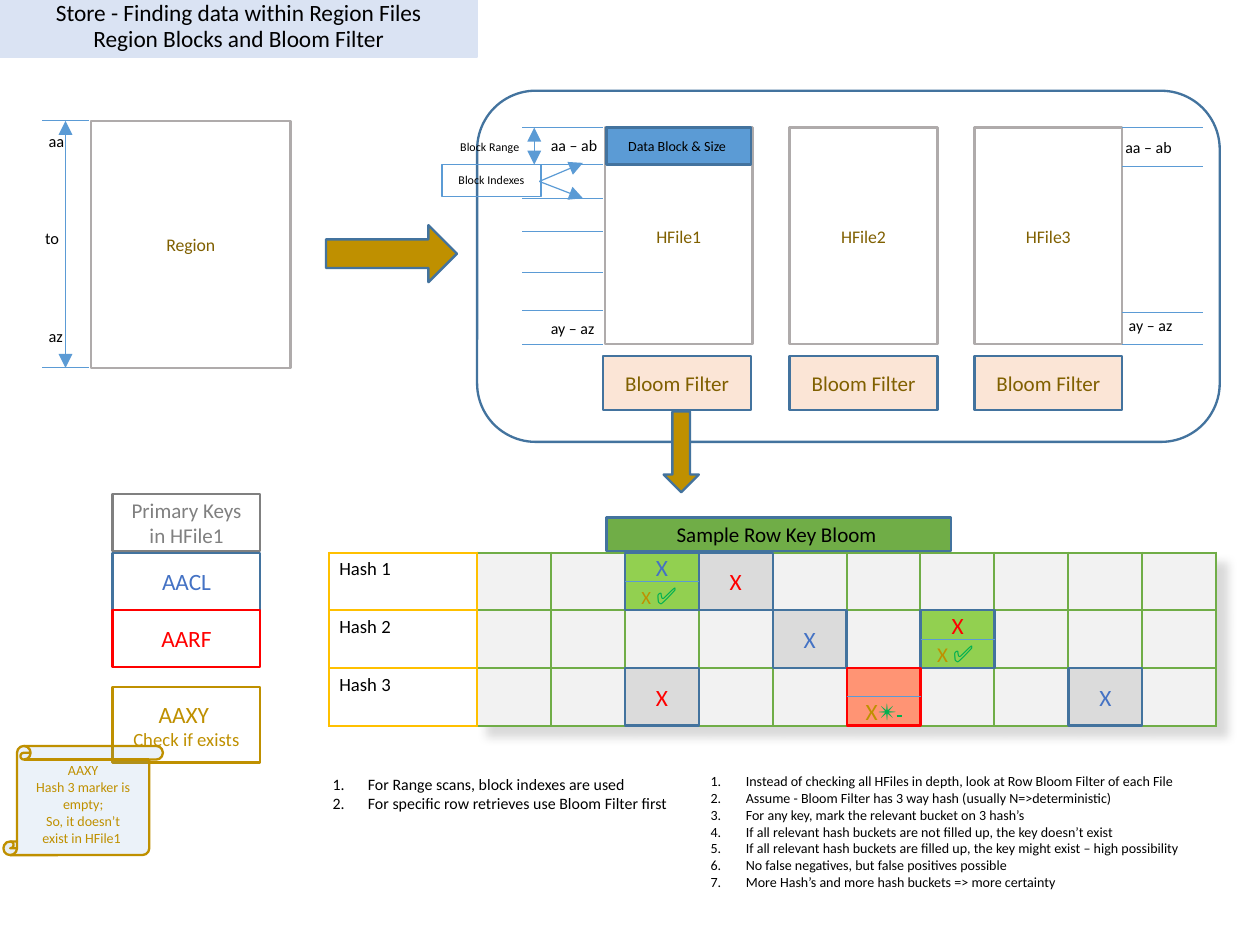
"""Builds a slide on finding data in region files with block indexes and Bloom filters."""
from lxml import etree
from pptx import Presentation
from pptx import util as u
from pptx.dml import color
from pptx.enum import shapes, text
from pptx.oxml import ns

COLORS = {
    "black": "000000", "title": "DAE3F3", "gray": "AFABAB", "olive": "806000",
    "gold": "BF9000", "navy": "43739E", "sky": "5B9BD5", "peach": "FBE5D6",
    "green": "70AD47", "pale": "F2F2F2", "amber": "FFC000", "bucket": "DBDBDB",
    "red": "FF0000", "blue": "4472C4", "lime": "92D050", "tick": "00B050",
    "salmon": "FF9474", "dim": "808080",
}
FONT = "Calibri"
SHAPE = shapes.MSO_SHAPE
ALIGN = text.PP_ALIGN
ANCHOR = text.MSO_ANCHOR
GRID_LEFT, GRID_TOP, GRID_STEP, ROW_STEP = 2.84, 3.29, 0.44, 1.03 / 3


def rgb(name):
    return color.RGBColor.from_string(COLORS[name])


def child(parent, tag, **attributes):
    return etree.SubElement(parent, ns.qn(tag), attributes)


def inches(values):
    return [u.Inches(value) for value in values]


def format_span(span, size, ink):
    span.font.size = u.Pt(size)
    span.font.name = FONT
    span.font.color.rgb = rgb(ink)


def write(frame, paragraphs, align=ALIGN.CENTER):
    frame.word_wrap = True
    frame.text = "\n".join("" for _ in paragraphs)
    for para, spans in zip(frame.paragraphs, paragraphs):
        para.alignment = align
        for words, size, ink in spans:
            span = para.add_run()
            span.text = words
            format_span(span, size, ink)


def paint(shape, fill, line, width=1):
    if fill:
        shape.fill.solid()
        shape.fill.fore_color.rgb = rgb(fill)
    else:
        shape.fill.background()
    shape.line.color.rgb = rgb(line)
    shape.line.width = u.Pt(width)


def add_box(slide, place, paragraphs=(), fill=None, line="navy", kind=SHAPE.RECTANGLE):
    box = slide.shapes.add_shape(kind, *inches(place))
    box.shadow.inherit = False
    paint(box, fill, line)
    box.text_frame.vertical_anchor = ANCHOR.MIDDLE
    if paragraphs:
        write(box.text_frame, paragraphs)
    return box


def add_label(slide, place, lines, size=6.8, align=ALIGN.LEFT):
    label = slide.shapes.add_textbox(*inches(place))
    write(label.text_frame, [[(line, size, "black")] for line in lines], align)
    if align == ALIGN.RIGHT:
        label.text_frame.margin_left = 0
    return label


def add_line(slide, start, end, arrows=()):
    line = slide.shapes.add_connector(shapes.MSO_CONNECTOR.STRAIGHT, *inches(start + end))
    line.line.color.rgb = rgb("sky")
    line.line.width = u.Pt(0.5)
    outline = line.line._get_or_add_ln()
    for arrow in arrows:
        child(outline, arrow, type="triangle")
    child(line._element.spPr, "a:effectLst")


def add_list(holder, place, items, size):
    holder.left, holder.top, holder.width, holder.height = inches(place)
    frame = holder.text_frame
    frame.auto_size = text.MSO_AUTO_SIZE.NONE
    write(frame, [[(item, size, "black")] for item in items], ALIGN.LEFT)
    for para in frame.paragraphs:
        para.space_before = u.Pt(0)
        props = para._p.get_or_add_pPr()
        props.set("marL", str(u.Inches(0.21)))
        props.set("indent", str(-u.Inches(0.21)))
        child(props, "a:buFont", typeface="+mj-lt")
        child(props, "a:buAutoNum", type="arabicPeriod")


def add_grid(slide, left, width, rows, border, fill=None):
    count = len(rows[0])
    place = inches((left, GRID_TOP, width * count, ROW_STEP * len(rows)))
    table = slide.shapes.add_table(len(rows), count, *place).table
    table.first_row = table.horz_banding = False
    for cell, words in zip(table.iter_cells(), sum(rows, [])):
        cell.margin_left = cell.margin_right = u.Inches(0.06)
        cell.margin_top = cell.margin_bottom = u.Inches(0.03)
        if words:
            write(cell.text_frame, [[(words, 8, "black")]], ALIGN.LEFT)
        else:
            cell.text_frame.paragraphs[0]._p.get_or_add_endParaRPr().set("sz", "800")
        if fill:
            cell.fill.solid()
            cell.fill.fore_color.rgb = rgb(fill)
        else:
            cell.fill.background()
        props = cell._tc.get_or_add_tcPr()
        for index, side in enumerate(("a:lnL", "a:lnR", "a:lnT", "a:lnB")):
            edge = child(props, side, w=str(u.Pt(1)))
            child(child(edge, "a:solidFill"), "a:srgbClr", val=COLORS[border])
            props.insert(index, edge)
    return table


def add_table_shadow(table):
    props = table._tbl.tblPr
    effects = child(props, "a:effectLst")
    shadow = child(effects, "a:outerShdw", blurRad="50800", dist="76200", dir="2700000")
    tint = child(shadow, "a:srgbClr", val=COLORS["black"])
    child(tint, "a:alpha", val="15000")
    props.insert(0, effects)


def add_bucket(slide, row, column, paragraphs, fill="bucket", line="navy"):
    left, top = GRID_LEFT + GRID_STEP * column, GRID_TOP + ROW_STEP * row
    bucket = add_box(slide, (left, top, GRID_STEP, ROW_STEP), paragraphs, fill, line)
    if fill != "bucket":
        middle = top + ROW_STEP / 2
        add_line(slide, (left, middle), (left + GRID_STEP, middle))
    return bucket


def add_title(slide):
    title = slide.shapes.title
    title.left, title.top, title.width, title.height = inches((0, -0.02, 2.84, 0.36))
    paint(title, "title", "title", 0.75)
    frame = title.text_frame
    frame.text = "Store - Finding data within Region Files\vRegion Blocks and Bloom Filter"
    frame.auto_size = text.MSO_AUTO_SIZE.NONE
    frame.vertical_anchor = ANCHOR.MIDDLE
    para = frame.paragraphs[0]
    para.alignment, para.line_spacing = ALIGN.CENTER, 0.9
    for span in para.runs:
        format_span(span, 10, "black")


def add_region(slide):
    add_box(slide, (0.54, 0.72, 1.19, 1.47), [[("Region", 7.6, "olive")]], line="gray")
    for y in (0.72, 2.19):
        add_line(slide, (0.25, y), (0.53, y))
    add_line(slide, (0.39, 0.72), (0.39, 2.19), ("a:headEnd", "a:tailEnd"))
    keys = add_label(slide, (0.17, 0.73, 0.33, 1.4), (" aa", "to", " az"), 7)
    for para in keys.text_frame.paragraphs[1:]:
        para.space_before = u.Pt(33.5)
    add_box(slide, (1.94, 1.34, 0.78, 0.34), fill="gold", kind=SHAPE.RIGHT_ARROW)


def add_files(slide):
    add_box(slide, (2.84, 0.54, 4.42, 2.09), kind=SHAPE.ROUNDED_RECTANGLE)
    for number, left in enumerate((3.6, 4.7, 5.8), 1):
        add_box(slide, (left, 0.76, 0.88, 1.29), [[(f"HFile{number}", 7.6, "olive")]], line="gray")
    for left in (3.59, 4.7, 5.8):
        add_box(slide, (left, 2.12, 0.88, 0.32), [[("Bloom Filter", 9, "olive")]], "peach")
    for left, levels in ((3.11, (0.76, 0.98, 1.18, 1.38, 1.62, 1.85, 2.05)),
                         (6.68, (0.76, 0.99, 1.86, 2.05))):
        for y in levels:
            add_line(slide, (left, y), (left + 0.48, y))
    for left, top, width, words in ((3.18, 0.76, 0.58, "aa – ab"), (3.18, 1.85, 0.48, "ay – az"),
                                    (6.6, 0.77, 0.58, "aa – ab"), (6.62, 1.83, 0.48, "ay – az")):
        add_label(slide, (left, top, width, 0.21), [words])
    add_box(slide, (3.61, 0.76, 0.86, 0.22), [[("Data Block & Size ", 6, "black")]], "sky")
    add_label(slide, (2.63, 0.78, 0.56, 0.19), ["Block Range"], 5.1, ALIGN.RIGHT)
    indexes = add_label(slide, (2.63, 0.98, 0.59, 0.19), ["Block Indexes"], 5.1, ALIGN.RIGHT)
    paint(indexes, None, "sky", 0.75)
    add_line(slide, (3.18, 0.76), (3.18, 0.98), ("a:headEnd", "a:tailEnd"))
    for y in (0.97, 1.18):
        add_line(slide, (3.21, 1.08), (3.47, y), ("a:tailEnd",))
    add_box(slide, (3.95, 2.45, 0.21, 0.48), fill="gold", kind=SHAPE.DOWN_ARROW)


def add_keys(slide):
    for top, height, line, paragraphs in (
            (2.94, 0.34, "dim", [[("Primary Keys in HFile1", 9, "dim")]]),
            (3.29, 0.34, "navy", [[("AACL", 10, "blue")]]),
            (3.63, 0.34, "red", [[("AARF", 10, "red")]]),
            (4.09, 0.45, "gold", [[("AAXY ", 10, "gold")], [("Check if exists", 8, "gold")]])):
        add_box(slide, (0.67, top, 0.88, height), paragraphs, line=line)
    notes = ("AAXY", "Hash 3 marker is empty;", "So, it doesn’t exist in HFile1 ")
    scroll = add_box(slide, (0.02, 4.44, 0.95, 0.65), [[(note, 6, "gold")] for note in notes],
                     "sky", "gold", SHAPE.VERTICAL_SCROLL)
    tint = scroll._element.spPr.find(ns.qn("a:solidFill"))[0]
    child(tint, "a:alpha", val="12000")


def add_bloom(slide):
    add_box(slide, (3.61, 3.08, 2.05, 0.2), [[("Sample Row Key Bloom ", 9, "black")]], "green")
    add_table_shadow(add_grid(slide, GRID_LEFT, GRID_STEP, [[""] * 10] * 3, "green", "pale"))
    add_grid(slide, 1.96, 0.88, [["Hash 1"], ["Hash 2"], ["Hash 3"]], "amber")
    for row, column, ink in ((0, 3, "red"), (1, 4, "blue"), (2, 2, "red"), (2, 8, "blue")):
        add_bucket(slide, row, column, [[("X", 10, ink)]])
    for row, column, ink, size in ((0, 2, "blue", 8), (1, 6, "red", 9)):
        marks = [[("X", 10, ink)], [("X", size, "gold"), (" ✅", 10, "tick")]]
        bucket = add_bucket(slide, row, column, marks, "lime")
        bucket.text_frame.paragraphs[1].alignment = ALIGN.LEFT
    marks = [[("X", 10, "gold"), ("✴️", 10, "tick"), (" ", 10, "tick")]]
    frame = add_bucket(slide, 2, 5, marks, "salmon", "red").text_frame
    frame.vertical_anchor, frame.margin_bottom = ANCHOR.BOTTOM, 0
    frame.paragraphs[0].runs[-1].font._element.set("strike", "sngStrike")


def main():
    deck = Presentation()
    deck.slide_width = u.Inches(7.5)
    deck.slide_height = deck.slide_width * 3 // 4
    slide = deck.slides.add_slide(deck.slide_layouts.get_by_name("Two Content"))
    add_title(slide)
    add_region(slide)
    add_files(slide)
    add_keys(slide)
    add_bloom(slide)
    add_list(slide.placeholders[1], (1.88, 4.56, 2.96, 0.44), (
        "For Range scans, block indexes are used",
        "For specific row retrieves use Bloom Filter first"), 6.8)
    add_list(slide.placeholders[2], (4.13, 4.55, 3.32, 0.82), (
        "Instead of checking all HFiles in depth, look at Row Bloom Filter of each File",
        "Assume - Bloom Filter has 3 way hash (usually N=>deterministic)",
        "For any key, mark the relevant bucket on 3 hash’s",
        "If all relevant hash buckets are not filled up, the key doesn’t exist",
        "If all relevant hash buckets are filled up, the key might exist – high possibility",
        "No false negatives, but false positives possible",
        "More Hash’s and more hash buckets => more certainty"), 6)
    deck.save("out.pptx")


if __name__ == "__main__":
    main()
